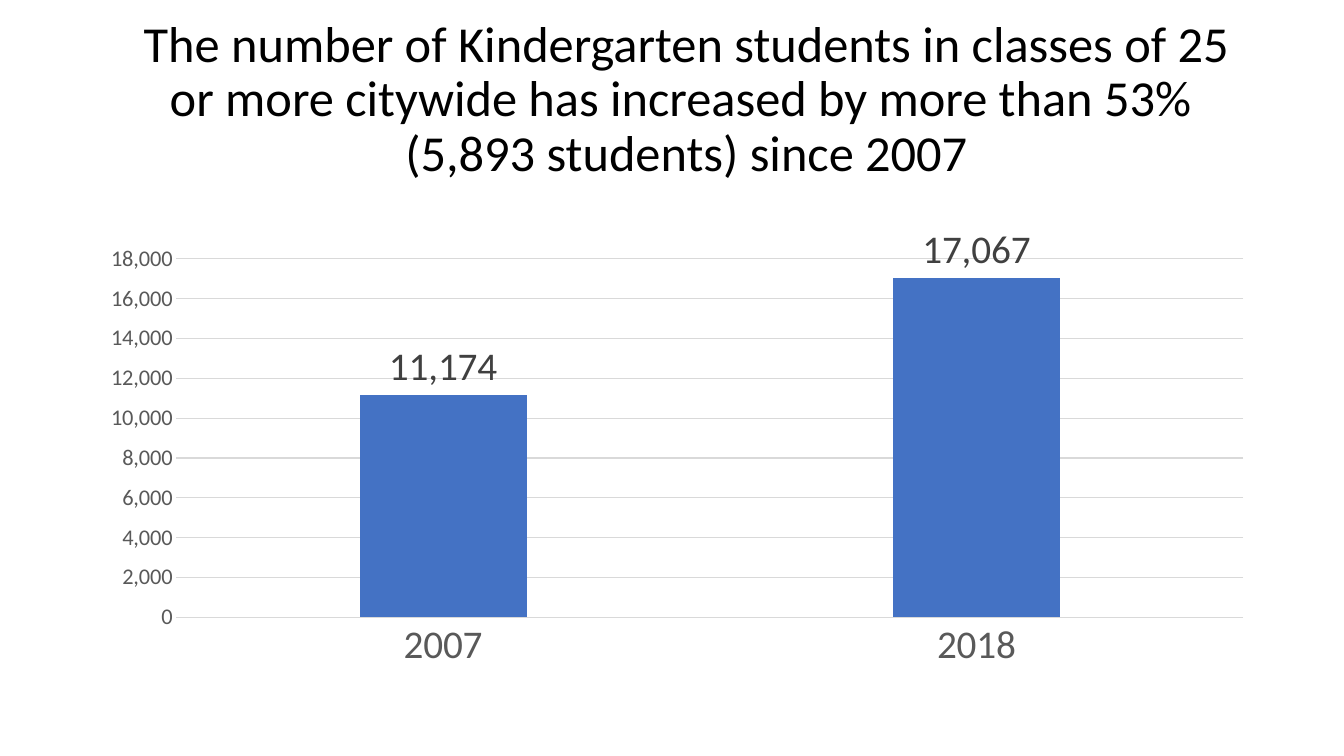
from lxml import etree
from pptx import Presentation
from pptx.chart.data import CategoryChartData
from pptx.dml.color import RGBColor
from pptx.enum.chart import XL_CHART_TYPE, XL_LABEL_POSITION, XL_TICK_MARK
from pptx.enum.text import MSO_ANCHOR, PP_ALIGN
from pptx.oxml.ns import qn
from pptx.util import Pt

COLUMNS = XL_CHART_TYPE.COLUMN_CLUSTERED
OUTSIDE_END = XL_LABEL_POSITION.OUTSIDE_END
NO_TICK = XL_TICK_MARK.NONE
MIDDLE = MSO_ANCHOR.MIDDLE
CENTER = PP_ALIGN.CENTER

PX = 9144  # 100 px to the inch
FONT = "Calibri"
COLORS = {
    "title": "000000",
    "axis": "595959",
    "label": "404040",
    "grid": "D9D9D9",
    "bar": "4472C4",
}


def style_font(font, size, color):
    for attribute, value in {"name": FONT, "size": Pt(size), "bold": False}.items():
        setattr(font, attribute, value)
    font.color.rgb = RGBColor.from_string(COLORS[color])


def place(box):
    return [length * PX for length in box]


deck = Presentation()
deck.slide_width, deck.slide_height = place((1333, 750))
slide = deck.slides.add_slide(deck.slide_layouts[5])

# Title
headline = slide.shapes.title
headline.left, headline.top, headline.width, headline.height = place((106, 27, 1150, 145))
headline.text_frame.word_wrap = True
headline.text_frame.vertical_anchor = MIDDLE
headline.text_frame.text = (
    "The number of Kindergarten students in classes of 25 or more citywide "
    "has increased by more than 53% \v(5,893 students) since 2007"
)
headline_paragraph = headline.text_frame.paragraphs[0]
headline_paragraph.alignment = CENTER
headline_paragraph.line_spacing = 0.9
for run in headline_paragraph.runs:
    style_font(run.font, 36, "title")

# Student counts
student_counts = CategoryChartData(number_format="#,##0")
student_counts.categories = ["2007", "2018"]
student_counts.add_series("Series 1", (11174, 17067))
chart = slide.shapes.add_chart(
    COLUMNS, *place((106, 196, 1150, 508)), student_counts
).chart
chart.has_legend = False
chart.has_title = False
style_font(chart.font, 10, "title")

# Columns and their labels
columns = chart.plots[0]
for attribute, value in {
    "gap_width": 219,
    "overlap": -27,
    "vary_by_categories": False,
    "has_data_labels": True,
}.items():
    setattr(columns, attribute, value)
bar_fill = columns.series[0].format.fill
bar_fill.solid()
bar_fill.fore_color.rgb = RGBColor.from_string(COLORS["bar"])
labels = columns.data_labels
for attribute, value in {
    "show_value": True,
    "position": OUTSIDE_END,
    "number_format": "#,##0",
    "number_format_is_linked": False,
}.items():
    setattr(labels, attribute, value)
style_font(labels.font, 28, "label")

# Axes and gridlines
years, students = chart.category_axis, chart.value_axis
for axis, size in ((years, 28), (students, 16)):
    axis.major_tick_mark = axis.minor_tick_mark = NO_TICK
    style_font(axis.tick_labels.font, size, "axis")
students.minimum_scale, students.maximum_scale = 0, 18000
students.major_unit = 2000
students.tick_labels.number_format = "#,##0"
students.tick_labels.number_format_is_linked = False
students.format.line.fill.background()
for line in (years.format.line, students.major_gridlines.format.line):
    line.color.rgb = RGBColor.from_string(COLORS["grid"])
    line.width = Pt(0.75)

# Inner plot area, in fractions of the chart
plot_area = chart.plots[0]._element.getparent()
for old_layout in plot_area.findall(qn("c:layout")):
    plot_area.remove(old_layout)
layout = etree.Element(qn("c:layout"))
plot_area.insert(0, layout)
manual = etree.SubElement(layout, qn("c:manualLayout"))
for tag, value in (
    ("layoutTarget", "inner"),
    ("xMode", "edge"),
    ("yMode", "edge"),
    ("x", "0.06"),
    ("y", "0.12"),
    ("w", "0.92"),
    ("h", "0.7"),
):
    etree.SubElement(manual, qn(f"c:{tag}")).set("val", value)

deck.save("out.pptx")
